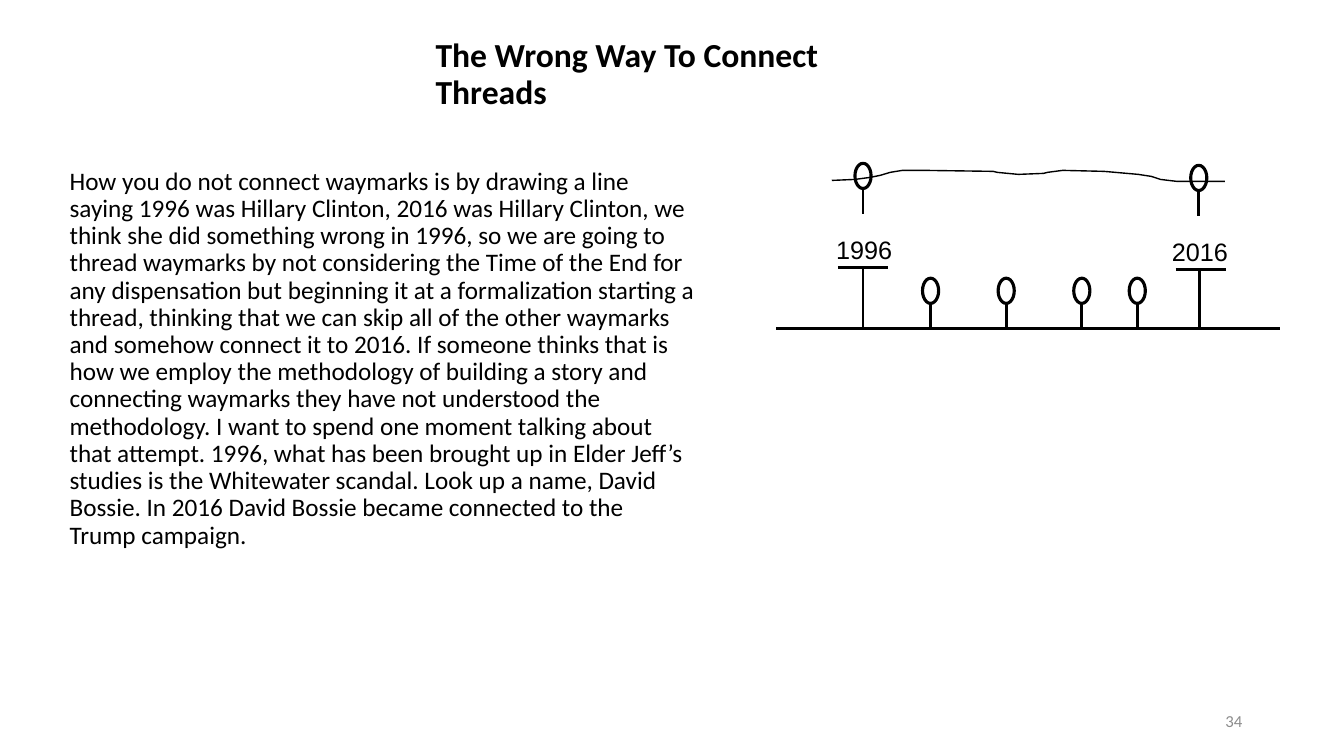
from dataclasses import dataclass

import pptx
import pptx.dml.color
import pptx.enum.shapes
import pptx.enum.text
import pptx.oxml.ns
import pptx.shapes.autoshape
import pptx.shapes.shapetree
import pptx.text.text
import pptx.util
from lxml import etree

EMU_PER_PX = 9144  # 100 px to the inch


@dataclass(frozen=True)
class Theme:
    ink: str = "000000"
    paper: str = "FFFFFF"
    muted: str = "8C8C8C"
    text_font: str = "Calibri"
    year_font: str = "Arial"
    title_size: int = 24
    body_size: int = 18
    number_size: int = 12
    line_width: float = 2
    head_width: float = 2.25
    thread_width: float = 1


@dataclass(frozen=True)
class Box:
    left: int
    top: int
    width: int
    height: int


@dataclass(frozen=True)
class Pin:
    """A waymark: an oval head on a short stem."""
    center: int
    top: int
    filled: bool = True


@dataclass(frozen=True)
class YearMark:
    """A year written above a tall T-shaped post."""
    year: str
    center: int
    label: Box
    bar_left: int
    bar_y: int


THEME = Theme()
SLIDE = Box(0, 0, 1333, 750)
TITLE_BOX = Box(422, 47, 500, 55)
BODY_BOX = Box(59, 162, 641, 533)
NUMBER_BOX = Box(942, 695, 300, 40)
HEAD_WIDTH, HEAD_HEIGHT, STEM_HEIGHT = 16, 25, 25
BAR_WIDTH, POST_HEIGHT = 50, 60
TIMELINE_LEFT, TIMELINE_RIGHT, TIMELINE_Y = 770, 1270, 326

TITLE = "The Wrong Way To Connect Threads"
BODY = (
    "How you do not connect waymarks is by drawing a line saying 1996 was Hillary Clinton, "
    "2016 was Hillary Clinton, we think she did something wrong in 1996, so we are going to "
    "thread waymarks by not considering the Time of the End for any dispensation but beginning "
    "it at a formalization starting a thread, thinking that we can skip all of the other "
    "waymarks and somehow connect it to 2016. If someone thinks that is how we employ the "
    "methodology of building a story and connecting waymarks they have not understood the "
    "methodology. I want to spend one moment talking about that attempt. 1996, what has been "
    "brought up in Elder Jeff’s studies is the Whitewater scandal. Look up a name, David "
    "Bossie. In 2016 David Bossie became connected to the Trump campaign."
)
YEAR_MARKS = [
    YearMark("1996", 856, Box(824, 228, 66, 36), 831, 265),
    YearMark("2016", 1190, Box(1157, 230, 66, 36), 1166, 267),
]
TIMELINE_PINS = [Pin(center, 276) for center in (923, 998, 1073, 1128)]
THREAD_PINS = [Pin(856, 162, filled=False), Pin(1189, 164, filled=False)]
THREAD = [
    (825, 179), (848, 178), (863, 176), (873, 174), (883, 171), (895, 169), (917, 169),
    (985, 170), (989, 171), (1010, 173), (1035, 172), (1039, 171), (1054, 169),
    (1095, 170), (1129, 173), (1142, 175), (1148, 177), (1151, 178), (1159, 179),
    (1168, 180), (1215, 180),
]


def px(length: int) -> pptx.util.Emu:
    return pptx.util.Emu(length * EMU_PER_PX)


def color(value: str) -> pptx.dml.color.RGBColor:
    return pptx.dml.color.RGBColor.from_string(value)


def place(shape: pptx.shapes.autoshape.Shape, box: Box) -> None:
    shape.left, shape.top = px(box.left), px(box.top)
    shape.width, shape.height = px(box.width), px(box.height)


def write(
    shape: pptx.shapes.autoshape.Shape,
    text: str,
    size: int,
    font: str = THEME.text_font,
    ink: str = THEME.ink,
    bold: bool = False,
    align: pptx.enum.text.PP_ALIGN = pptx.enum.text.PP_ALIGN.LEFT,
    anchor: pptx.enum.text.MSO_ANCHOR = pptx.enum.text.MSO_ANCHOR.TOP,
) -> pptx.text.text._Paragraph:
    """Put one run of text in the shape and return its paragraph."""
    frame = shape.text_frame
    frame.word_wrap = True
    frame.auto_size = pptx.enum.text.MSO_AUTO_SIZE.NONE
    frame.vertical_anchor = anchor
    paragraph = frame.paragraphs[0]
    paragraph.alignment = align
    run = paragraph.add_run()
    run.text = text
    run.font.name, run.font.size, run.font.bold = font, pptx.util.Pt(size), bold
    run.font.color.rgb = color(ink)
    return paragraph


def add_text_box(
    shapes: pptx.shapes.shapetree.SlideShapes, box: Box
) -> pptx.shapes.autoshape.Shape:
    return shapes.add_textbox(px(box.left), px(box.top), px(box.width), px(box.height))


def add_line(
    shapes: pptx.shapes.shapetree._BaseGroupShapes, x1: int, y1: int, x2: int, y2: int
) -> None:
    line = shapes.add_connector(
        pptx.enum.shapes.MSO_CONNECTOR.STRAIGHT, px(x1), px(y1), px(x2), px(y2)
    )
    line.line.color.rgb = color(THEME.ink)
    line.line.width = pptx.util.Pt(THEME.line_width)
    etree.SubElement(line._element.spPr, pptx.oxml.ns.qn("a:effectLst"))


def add_pin(shapes: pptx.shapes.shapetree.SlideShapes, pin: Pin) -> None:
    parts = shapes.add_group_shape().shapes
    neck = pin.top + HEAD_HEIGHT
    add_line(parts, pin.center, neck, pin.center, neck + STEM_HEIGHT)
    head = parts.add_shape(
        pptx.enum.shapes.MSO_SHAPE.OVAL,
        px(pin.center - HEAD_WIDTH // 2), px(pin.top), px(HEAD_WIDTH), px(HEAD_HEIGHT),
    )
    head.shadow.inherit = False
    if pin.filled:
        head.fill.solid()
        head.fill.fore_color.rgb = color(THEME.paper)
    else:
        head.fill.background()
    head.line.color.rgb = color(THEME.ink)
    head.line.width = pptx.util.Pt(THEME.head_width)


def add_year_mark(shapes: pptx.shapes.shapetree.SlideShapes, mark: YearMark) -> None:
    add_line(shapes, mark.bar_left, mark.bar_y, mark.bar_left + BAR_WIDTH, mark.bar_y)
    add_line(shapes, mark.center, mark.bar_y, mark.center, mark.bar_y + POST_HEIGHT)
    label = add_text_box(shapes, mark.label)
    frame = label.text_frame
    frame.margin_left = frame.margin_right = frame.margin_top = frame.margin_bottom = px(4)
    write(label, mark.year, THEME.body_size, font=THEME.year_font,
          align=pptx.enum.text.PP_ALIGN.CENTER)


def add_thread(shapes: pptx.shapes.shapetree.SlideShapes) -> None:
    builder = shapes.build_freeform(*THREAD[0], scale=EMU_PER_PX)
    builder.add_line_segments(THREAD[1:], close=False)
    thread = builder.convert_to_shape()
    thread.shadow.inherit = False
    thread.fill.background()
    thread.line.color.rgb = color(THEME.ink)
    thread.line.width = pptx.util.Pt(THEME.thread_width)


def main() -> None:
    presentation = pptx.Presentation()
    presentation.slide_width, presentation.slide_height = px(SLIDE.width), px(SLIDE.height)
    slide = presentation.slides.add_slide(presentation.slide_layouts[1])
    shapes = slide.shapes
    middle = pptx.enum.text.MSO_ANCHOR.MIDDLE

    place(shapes.title, TITLE_BOX)
    heading = write(shapes.title, TITLE, THEME.title_size, bold=True, anchor=middle)
    heading.line_spacing = 0.9

    body = slide.placeholders[1]
    place(body, BODY_BOX)
    paragraph = write(body, BODY, THEME.body_size)
    paragraph.line_spacing, paragraph.space_before = 0.9, pptx.util.Pt(10)
    properties = paragraph._p.get_or_add_pPr()
    properties.set("marL", "0")
    properties.set("indent", "0")
    etree.SubElement(properties, pptx.oxml.ns.qn("a:buNone"))

    write(add_text_box(shapes, NUMBER_BOX), "34", THEME.number_size, ink=THEME.muted,
          align=pptx.enum.text.PP_ALIGN.RIGHT, anchor=middle)

    add_line(shapes, TIMELINE_LEFT, TIMELINE_Y, TIMELINE_RIGHT, TIMELINE_Y)
    for mark in YEAR_MARKS:
        add_year_mark(shapes, mark)
    for pin in TIMELINE_PINS + THREAD_PINS:
        add_pin(shapes, pin)
    add_thread(shapes)
    presentation.save("out.pptx")


if __name__ == "__main__":
    main()
